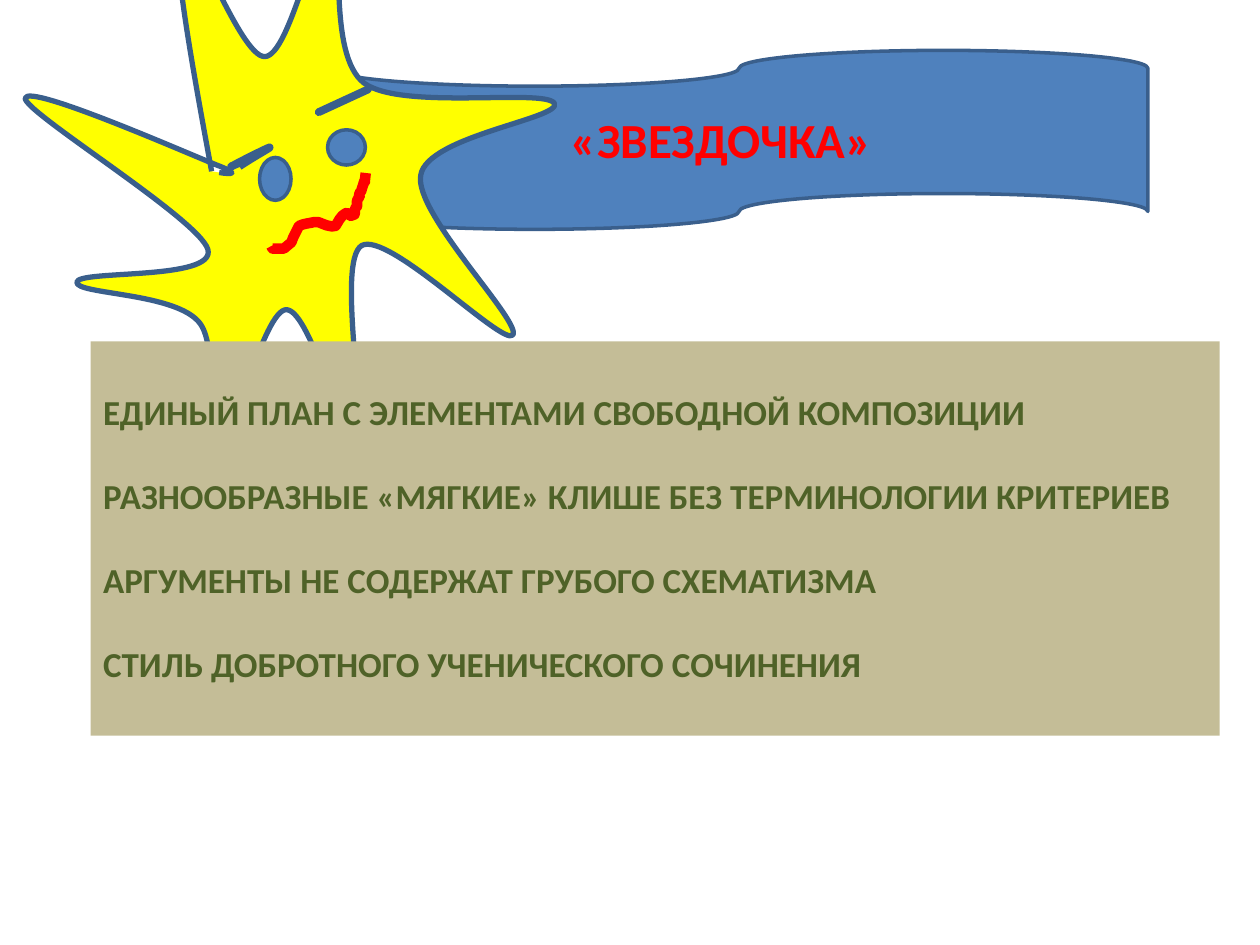
import math

import lxml.etree
import pptx
import pptx.dml.color
import pptx.enum.shapes
import pptx.enum.text
import pptx.oxml.ns
import pptx.util

Inches = pptx.util.Inches
Pt = pptx.util.Pt
qn = pptx.oxml.ns.qn
SHAPES = pptx.enum.shapes.MSO_SHAPE
ALIGN = pptx.enum.text.PP_ALIGN

COLORS = {
    "blue": "4F81BD", "outline": "3A5F8C", "yellow": "FFFF00",
    "red": "FF0000", "sand": "C4BD97", "green": "4F6228",
}

# Outlines: a start point, then lines (x, y) or curves (two controls, end)
STAR = [
    (1.68, 1.36),
    (1.52, 0.49, 1.36, -0.39, 1.43, -0.54),
    (1.5, -0.69, 1.9, 0.45, 2.1, 0.45),
    (2.3, 0.45, 2.49, -0.57, 2.62, -0.54),
    (2.75, -0.5, 2.59, 0.43, 2.89, 0.66),
    (3.19, 0.88, 4.32, 0.7, 4.4, 0.82),
    (4.47, 0.94, 3.39, 1.08, 3.34, 1.39),
    (3.28, 1.69, 4.15, 2.56, 4.07, 2.66),
    (3.99, 2.75, 3.08, 1.83, 2.87, 1.95),
    (2.67, 2.08, 2.92, 3.33, 2.81, 3.42),
    (2.71, 3.5, 2.45, 2.41, 2.26, 2.46),
    (2.07, 2.51, 1.79, 3.71, 1.68, 3.73),
    (1.57, 3.75, 1.77, 2.82, 1.59, 2.57),
    (1.41, 2.32, 0.6, 2.34, 0.61, 2.24),
    (0.62, 2.14, 1.72, 2.23, 1.65, 1.98),
    (1.58, 1.74, 0.19, 0.89, 0.2, 0.78),
    (0.22, 0.66, 1.47, 1.21, 1.72, 1.31),
    (1.98, 1.41, 1.74, 1.37, 1.74, 1.37),
]
LEFT_BROW = [
    (1.9, 1.32),
    (2.02, 1.24, 2.15, 1.17, 2.14, 1.17),
    (2.13, 1.17, 1.87, 1.3, 1.84, 1.32),
    (1.81, 1.33, 1.88, 1.3, 1.96, 1.27),
]
RIGHT_BROW = [
    (2.53, 0.89),
    (2.92, 0.71),
    (2.92, 0.71, 2.53, 0.89, 2.53, 0.89),
]
MOUTH = [
    (2.9, 1.37),
    (2.88, 1.53, 2.91, 1.36, 2.88, 1.46),
    (2.87, 1.47, 2.87, 1.48, 2.87, 1.49),
    (2.87, 1.51, 2.86, 1.52, 2.85, 1.53),
    (2.83, 1.62, 2.88, 1.5, 2.83, 1.59),
    (2.83, 1.68, 2.84, 1.59, 2.81, 1.67),
    (2.81, 1.68, 2.82, 1.69, 2.81, 1.7),
    (2.8, 1.7, 2.79, 1.71, 2.78, 1.71),
    (2.77, 1.7, 2.75, 1.68, 2.74, 1.69),
    (2.7, 1.71, 2.68, 1.76, 2.66, 1.79),
    (2.64, 1.79, 2.62, 1.8, 2.61, 1.79),
    (2.59, 1.79, 2.53, 1.76, 2.52, 1.76),
    (2.51, 1.76, 2.5, 1.76, 2.49, 1.76),
    (2.45, 1.77, 2.41, 1.77, 2.37, 1.79),
    (2.37, 1.79, 2.33, 1.87, 2.32, 1.89),
    (2.32, 1.9, 2.32, 1.91, 2.31, 1.92),
    (2.25, 1.97),
    (2.25, 1.97, 2.18, 1.97, 2.16, 1.97),
    (2.16, 1.96, 2.15, 1.96, 2.15, 1.95),
]
MOUTH_CENTER = (2.53, 1.68)
FEATURES = [
    "ЕДИНЫЙ ПЛАН С ЭЛЕМЕНТАМИ СВОБОДНОЙ КОМПОЗИЦИИ",
    "РАЗНООБРАЗНЫЕ «МЯГКИЕ» КЛИШЕ БЕЗ ТЕРМИНОЛОГИИ КРИТЕРИЕВ",
    "АРГУМЕНТЫ НЕ СОДЕРЖАТ ГРУБОГО СХЕМАТИЗМА",
    "СТИЛЬ ДОБРОТНОГО УЧЕНИЧЕСКОГО СОЧИНЕНИЯ",
]


def color(name):
    return pptx.dml.color.RGBColor.from_string(COLORS[name])


def turn(point, center, degrees):
    angle = math.radians(degrees)
    x, y = point[0] - center[0], point[1] - center[1]
    return (center[0] + x * math.cos(angle) - y * math.sin(angle),
            center[1] + x * math.sin(angle) + y * math.cos(angle))


def write_text(shape, lines, *, size, ink, align=ALIGN.LEFT, top=0.05, gap=0):
    frame = shape.text_frame
    frame.word_wrap = True
    frame.vertical_anchor = pptx.enum.text.MSO_ANCHOR.TOP
    frame.margin_top = Inches(top)
    for index, line in enumerate(lines):
        paragraph = frame.add_paragraph() if index else frame.paragraphs[0]
        paragraph.alignment = align
        if index:
            paragraph.space_before = Pt(gap)
        run = paragraph.add_run()
        run.text = line
        run.font.name = "Calibri"
        run.font.size = Pt(size)
        run.font.bold = True
        run.font.color.rgb = color(ink)


class SlideBuilder:
    def __init__(self, slide):
        self.slide = slide
        self.line = "outline"

    def paint(self, shape, fill, line, width):
        shape.shadow.inherit = False
        if fill:
            shape.fill.solid()
            shape.fill.fore_color.rgb = color(fill)
        else:
            shape.fill.background()
        if width:
            shape.line.color.rgb = color(line or self.line)
            shape.line.width = Pt(width)
        else:
            shape.line.fill.background()
        return shape

    def shape(self, kind, box, fill, width=0):
        shape = self.slide.shapes.add_shape(kind, *map(Inches, box))
        return self.paint(shape, fill, None, width)

    def curve(self, segments, width, fill=None, line=None, close=False,
              rotation=0, center=(0, 0)):
        """Draw an outline whose segments give its look after rotation."""
        segments = [
            [tuple(map(Inches, turn(pair, center, -rotation)))
             for pair in zip(segment[::2], segment[1::2])]
            for segment in segments]
        ends = [segment[-1] for segment in segments]
        builder = self.slide.shapes.build_freeform(*ends[0])
        builder.add_line_segments(ends[1:], close=close)
        shape = builder.convert_to_shape()

        # Bend the straight segments that have control points
        lines = list(shape._element.iter(qn("a:lnTo")))
        for element, segment in zip(lines, segments[1:]):
            if len(segment) == 3:
                bend = lxml.etree.Element(qn("a:cubicBezTo"))
                for x, y in segment:
                    lxml.etree.SubElement(bend, qn("a:pt"), x=str(x - shape.left),
                                          y=str(y - shape.top))
                element.getparent().replace(element, bend)
        shape.rotation = rotation
        return self.paint(shape, fill, line, width)

    def text(self, box, lines, **text_format):
        text_box = self.slide.shapes.add_textbox(*map(Inches, box))
        write_text(text_box, lines, **text_format)


def main():
    presentation = pptx.Presentation()
    presentation.slide_width = Inches(10)
    presentation.slide_height = Inches(7.5)
    builder = SlideBuilder(
        presentation.slides.add_slide(presentation.slide_layouts[6]))

    # Banner, star and title
    builder.shape(SHAPES.FLOWCHART_PUNCHED_TAPE, (2.62, 0.4, 6.49, 1.42), "blue", 2)
    builder.curve(STAR, 3, fill="yellow")
    builder.text((3.21, 0.82, 5.03, 0.57), ["«ЗВЕЗДОЧКА»"],
                 size=28, ink="red", align=ALIGN.CENTER)

    # Face
    for eye in ((2.6, 1.03, 0.3, 0.28), (2.06, 1.25, 0.25, 0.34)):
        builder.shape(SHAPES.OVAL, eye, "blue", 2)
    builder.curve(MOUTH, 6, line="red", rotation=169.4, center=MOUTH_CENTER)
    builder.curve(LEFT_BROW, 4.5)
    builder.curve(RIGHT_BROW, 4.5, fill="blue", close=True)

    # Panel of features
    panel = builder.shape(SHAPES.RECTANGLE, (0.72, 2.71, 8.96, 3.13), "sand")
    write_text(panel, FEATURES, size=20, ink="green", top=0.39, gap=24)

    presentation.save("out.pptx")


if __name__ == "__main__":
    main()
